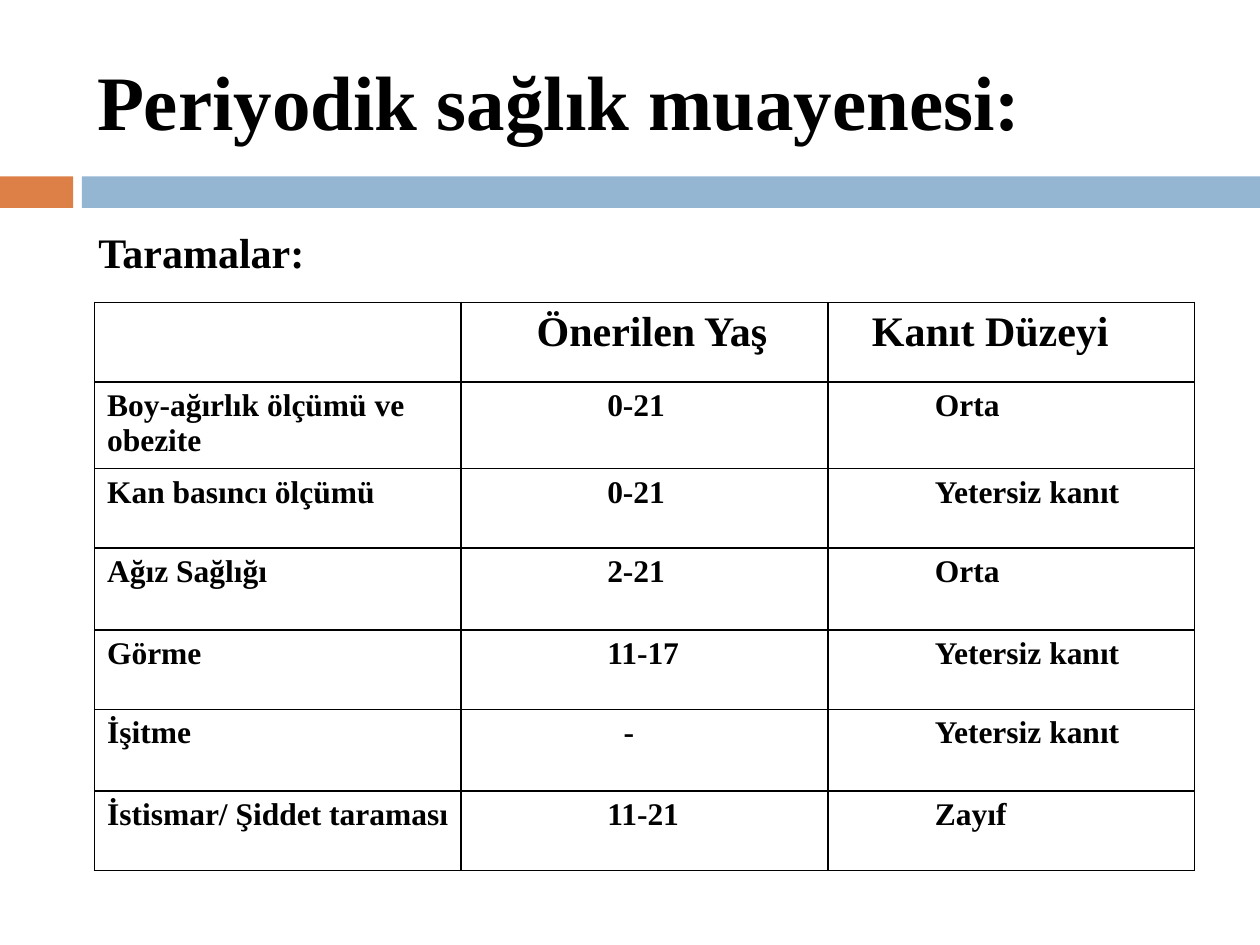
from lxml import etree
from pptx import Presentation
from pptx import util as u
from pptx.dml import color
from pptx.enum import shapes, text
from pptx.oxml import ns

COLORS = {"ink": "000000", "orange": "DD8047", "blue": "94B6D2"}
FONT = {"name": "Times New Roman", "bold": True}
COLUMN_WIDTH = 2.91
ROW_HEIGHTS = [0.63, 0.69, 0.63, 0.65, 0.63, 0.65, 0.63]
HEADER_MARGINS = [0.1, 0.6, 0.35]
BODY_MARGINS = [0.1, 1.16, 0.85]
DASH_MARGIN = 1.29
HEADER = ["", "Önerilen Yaş", "Kanıt Düzeyi"]
SCREENINGS = [
    ["Boy-ağırlık ölçümü ve obezite", "0-21", "Orta"],
    ["Kan basıncı ölçümü", "0-21", "Yetersiz kanıt"],
    ["Ağız Sağlığı", "2-21", "Orta"],
    ["Görme", "11-17", "Yetersiz kanıt"],
    ["İşitme", "-", "Yetersiz kanıt"],
    ["İstismar/ Şiddet taraması", "11-21", "Zayıf"],
]


def rgb(name):
    return color.RGBColor.from_string(COLORS[name])


def write(frame, words, size):
    para = frame.paragraphs[0]
    span = para.add_run()
    span.text = words
    for key, value in {**FONT, "size": u.Pt(size)}.items():
        setattr(span.font, key, value)
    span.font.color.rgb = rgb("ink")
    return para


def place(box, left, top, width, height):
    values = {"left": left, "top": top, "width": width, "height": height}
    for key, value in values.items():
        setattr(box, key, u.Inches(value))


def add_bar(page, left, width, fill):
    bar = page.shapes.add_shape(
        shapes.MSO_SHAPE.RECTANGLE,
        u.Inches(left), u.Inches(1.4), u.Inches(width), u.Inches(0.25))
    bar.shadow.inherit = False
    bar.fill.solid()
    bar.fill.fore_color.rgb = rgb(fill)
    bar.line.fill.background()


def add_title(page):
    title = page.shapes.title
    place(title, 0.67, 0.25, 8.92, 1.08)
    title.text_frame.vertical_anchor = text.MSO_ANCHOR.MIDDLE
    para = write(title.text_frame, "Periyodik sağlık muayenesi:", 44)
    para.alignment = text.PP_ALIGN.LEFT


def add_subtitle(page):
    body = page.placeholders[1]
    place(body, 0.43, 1.75, 9.15, 5.31)
    para = write(body.text_frame, "Taramalar:", 24)
    para.space_before = u.Pt(7)
    properties = para._p.get_or_add_pPr()
    properties.set("marL", str(u.Inches(0.25)))
    properties.set("indent", "0")
    etree.SubElement(properties, ns.qn("a:buNone"))


def draw_borders(cell):
    properties = cell._tc.get_or_add_tcPr()
    for position, side in enumerate(("lnL", "lnR", "lnT", "lnB")):
        line = etree.Element(ns.qn(f"a:{side}"), w=str(u.Pt(1)))
        fill = etree.SubElement(line, ns.qn("a:solidFill"))
        etree.SubElement(fill, ns.qn("a:srgbClr"), val=COLORS["ink"])
        properties.insert(position, line)


def fill_cell(cell, words, size, margin):
    cell.fill.background()
    cell.margin_left = u.Inches(margin)
    draw_borders(cell)
    if words:
        write(cell.text_frame, words, size)


def add_screening_table(page):
    rows = [HEADER] + SCREENINGS
    table = page.shapes.add_table(
        len(rows), len(HEADER), u.Inches(0.75), u.Inches(2.4),
        u.Inches(COLUMN_WIDTH * len(HEADER)), u.Inches(sum(ROW_HEIGHTS))).table
    table.first_row = False
    table.horz_banding = False
    for column in table.columns:
        column.width = u.Inches(COLUMN_WIDTH)
    for number, (words, height) in enumerate(zip(rows, ROW_HEIGHTS)):
        table.rows[number].height = u.Inches(height)
        size, margins = (18, BODY_MARGINS) if number else (24, HEADER_MARGINS)
        for column, (word, margin) in enumerate(zip(words, margins)):
            margin = DASH_MARGIN if word == "-" else margin
            fill_cell(table.cell(number, column), word, size, margin)


def main():
    deck = Presentation()
    deck.slide_width = u.Inches(10)
    deck.slide_height = u.Inches(7.5)
    page = deck.slides.add_slide(deck.slide_layouts[1])
    add_bar(page, 0, 0.58, "orange")
    add_bar(page, 0.65, 9.35, "blue")
    add_title(page)
    add_subtitle(page)
    add_screening_table(page)
    deck.save("out.pptx")


if __name__ == "__main__":
    main()
